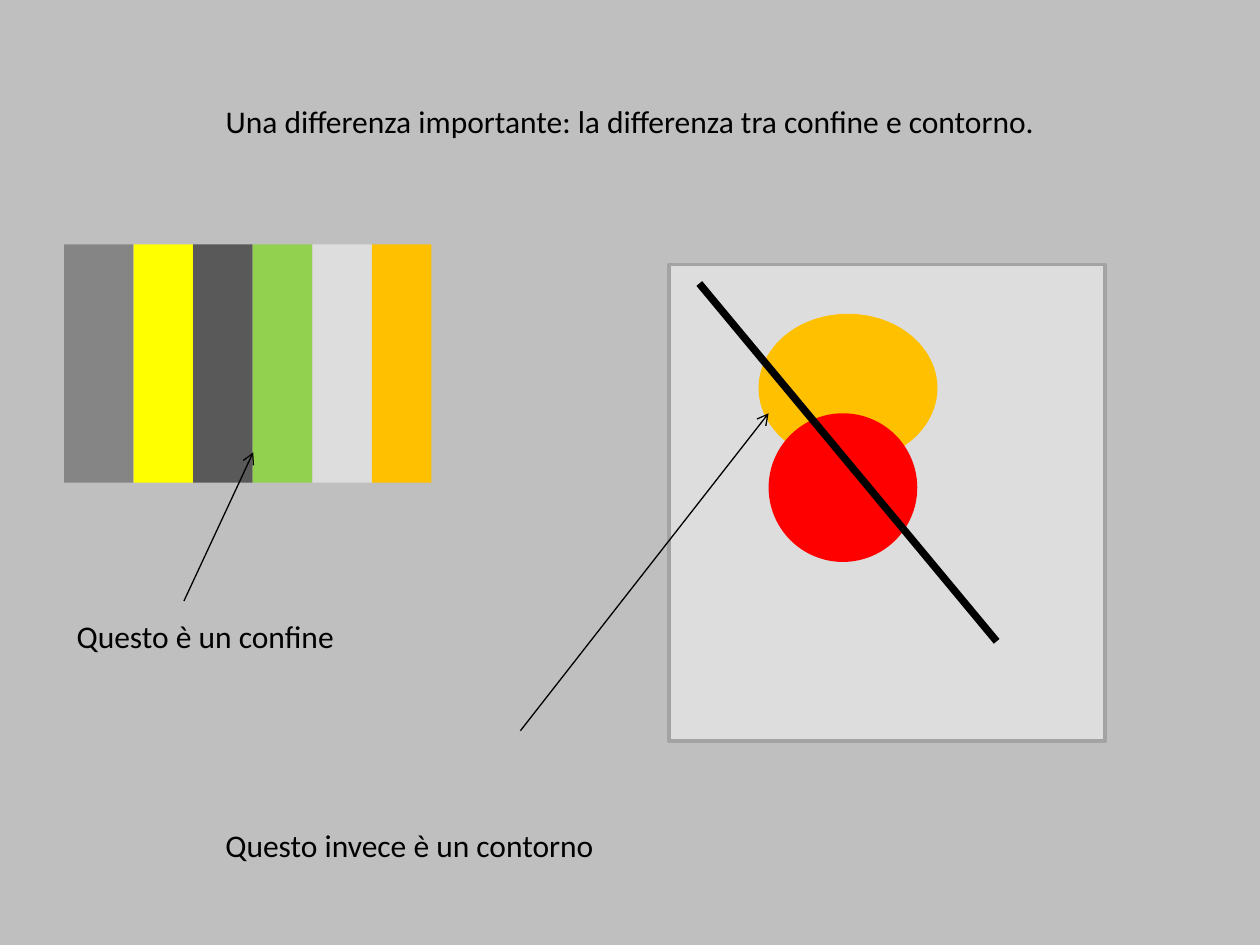
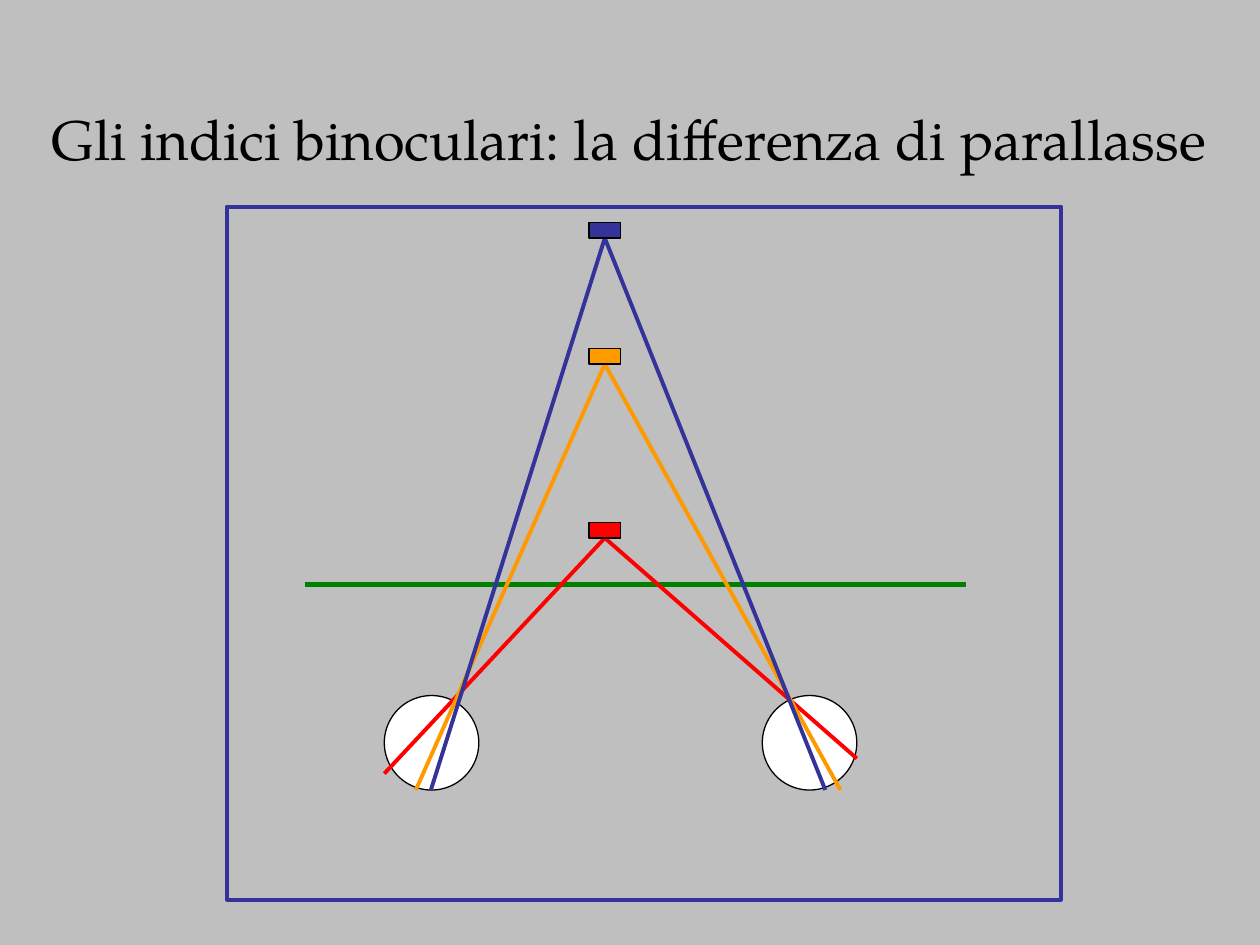
from dataclasses import dataclass

from lxml import etree
from pptx import Presentation
from pptx.dml.color import RGBColor
from pptx.enum.shapes import MSO_CONNECTOR as Connector, MSO_SHAPE as Shape
from pptx.enum.text import MSO_AUTO_SIZE as AutoSize, PP_ALIGN as Align
from pptx.oxml.ns import qn
from pptx.util import Inches, Pt


@dataclass(frozen=True)
class Theme:
    background: str = "BFBFBF"
    ink: str = "000000"
    white: str = "FFFFFF"
    red: str = "FF0000"
    amber: str = "FFC000"
    yellow: str = "FFFF00"
    lime: str = "92D050"
    light_grey: str = "DDDDDD"
    mid_grey: str = "858585"
    dark_grey: str = "595959"
    frame_grey: str = "A3A3A3"
    navy: str = "333399"
    orange: str = "FF9900"
    green: str = "008000"
    body_font: str = "Calibri"
    title_font: str = "TeX Gyre Pagella"
    body_size: int = 18
    title_size: int = 32
    thin: float = 0.75
    ray: float = 2.25


def apply_format(target, values):
    for attribute, value in values.items():
        setattr(target, attribute, value)


class Deck:
    def __init__(self, theme):
        self.theme = theme
        self.presentation = Presentation()
        apply_format(self.presentation,
                     {"slide_width": Inches(10), "slide_height": Inches(7.5)})

    def new_slide(self):
        self.slide = self.presentation.slides.add_slide(self.presentation.slide_layouts[6])
        self.paint(self.slide.background.fill, self.theme.background)
        self.shapes = self.slide.shapes

    def open_group(self):
        self.shapes = self.slide.shapes.add_group_shape().shapes

    @staticmethod
    def paint(fill, color):
        if color:
            fill.solid()
            fill.fore_color.rgb = RGBColor.from_string(color)
        else:
            fill.background()

    def stroke(self, line, color, points):
        self.paint(line.fill, color)
        if color:
            line.width = Pt(points)

    def text(self, box, words, font=None, size=None, align=Align.LEFT):
        frame = self.shapes.add_textbox(*map(Inches, box)).text_frame
        apply_format(frame, {"word_wrap": True, "auto_size": AutoSize.SHAPE_TO_FIT_TEXT})
        paragraph = frame.paragraphs[0]
        paragraph.alignment = align
        run = paragraph.add_run()
        run.text = words
        apply_format(run.font, {"name": font or self.theme.body_font,
                                "size": Pt(size or self.theme.body_size)})
        run.font.color.rgb = RGBColor.from_string(self.theme.ink)

    def shape(self, kind, box, fill=None, outline=None, points=0.75):
        figure = self.shapes.add_shape(kind, *map(Inches, box))
        figure.shadow.inherit = False
        self.paint(figure.fill, fill)
        self.stroke(figure.line, outline, points)

    def line(self, start, end, color, points, arrow=False):
        segment = self.shapes.add_connector(Connector.STRAIGHT, *map(Inches, (*start, *end)))
        self.stroke(segment.line, color, points)
        properties = segment._element.spPr
        etree.SubElement(properties, qn("a:effectLst"))
        if arrow:
            outline = properties.find(qn("a:ln"))
            etree.SubElement(outline, qn("a:tailEnd"), type="arrow")


def border_and_contour(deck):
    theme = deck.theme
    deck.new_slide()
    deck.text((0.59, 0.76, 8.82, 0.4),
              "Una differenza importante: la differenza tra confine e contorno.",
              align=Align.CENTER)

    # Adjacent stripes; the first is slightly wider
    left = 0.51
    stripes = (theme.mid_grey, theme.yellow, theme.dark_grey,
               theme.lime, theme.light_grey, theme.amber)
    for index, color in enumerate(stripes):
        width = 0.55 if index == 0 else 0.473
        deck.shape(Shape.RECTANGLE, (left, 1.94, width, 1.89), color)
        left += width

    # Overlapping discs crossed by a bar
    deck.shape(Shape.RECTANGLE, (5.31, 2.1, 3.46, 3.78), theme.light_grey, theme.frame_grey, 2)
    deck.shape(Shape.OVAL, (6.02, 2.49, 1.42, 1.18), theme.amber)
    deck.shape(Shape.OVAL, (6.1, 3.28, 1.18, 1.18), theme.red)
    deck.line((5.55, 2.25), (7.91, 5.09), theme.ink, 4.25)

    # Captions with their arrows
    captions = (
        ("Questo è un confine", (0.51, 4.85, 2.68, 0.4), (1.46, 4.77), (2.01, 3.59)),
        ("Questo invece è un contorno", (1.69, 6.51, 3.62, 0.4), (4.13, 5.8), (6.1, 3.28)),
    )
    for words, box, start, end in captions:
        deck.text(box, words)
        deck.line(start, end, theme.ink, theme.thin, arrow=True)


def parallax(deck):
    theme = deck.theme
    deck.new_slide()
    deck.text((0.31, 0.78, 9.45, 0.64), "Gli indici binoculari: la differenza di parallasse",
              theme.title_font, theme.title_size)

    # Frame and eyes
    deck.open_group()
    deck.shape(Shape.RECTANGLE, (1.8, 1.64, 6.62, 5.5), outline=theme.navy, points=theme.ray)
    for eye_left in (3.05, 6.05):
        deck.shape(Shape.OVAL, (eye_left, 5.52, 0.75, 0.75), theme.white, theme.ink, theme.thin)

    # Rays from each target to both retinas, and the image plane
    center = 4.8
    targets = (
        (theme.red, 4.27, (3.05, 6.14), (6.8, 6.02)),
        (theme.orange, 2.89, (3.3, 6.27), (6.67, 6.27)),
        (theme.navy, 1.89, (3.42, 6.27), (6.55, 6.27)),
    )
    deck.line((2.42, 4.64), (7.67, 4.64), theme.green, 3)
    for color, bottom, left_retina, right_retina in targets:
        deck.line(left_retina, (center, bottom), color, theme.ray)
        deck.line((center, bottom), right_retina, color, theme.ray)

    # Targets sit on top of their rays
    width, height = 0.25, 0.125
    for color, bottom, *_ in targets:
        deck.shape(Shape.RECTANGLE, (center - width / 2, bottom - height, width, height),
                   color, theme.ink, theme.thin)


def main():
    deck = Deck(Theme())
    border_and_contour(deck)
    parallax(deck)
    deck.presentation.save("out.pptx")


if __name__ == "__main__":
    main()
